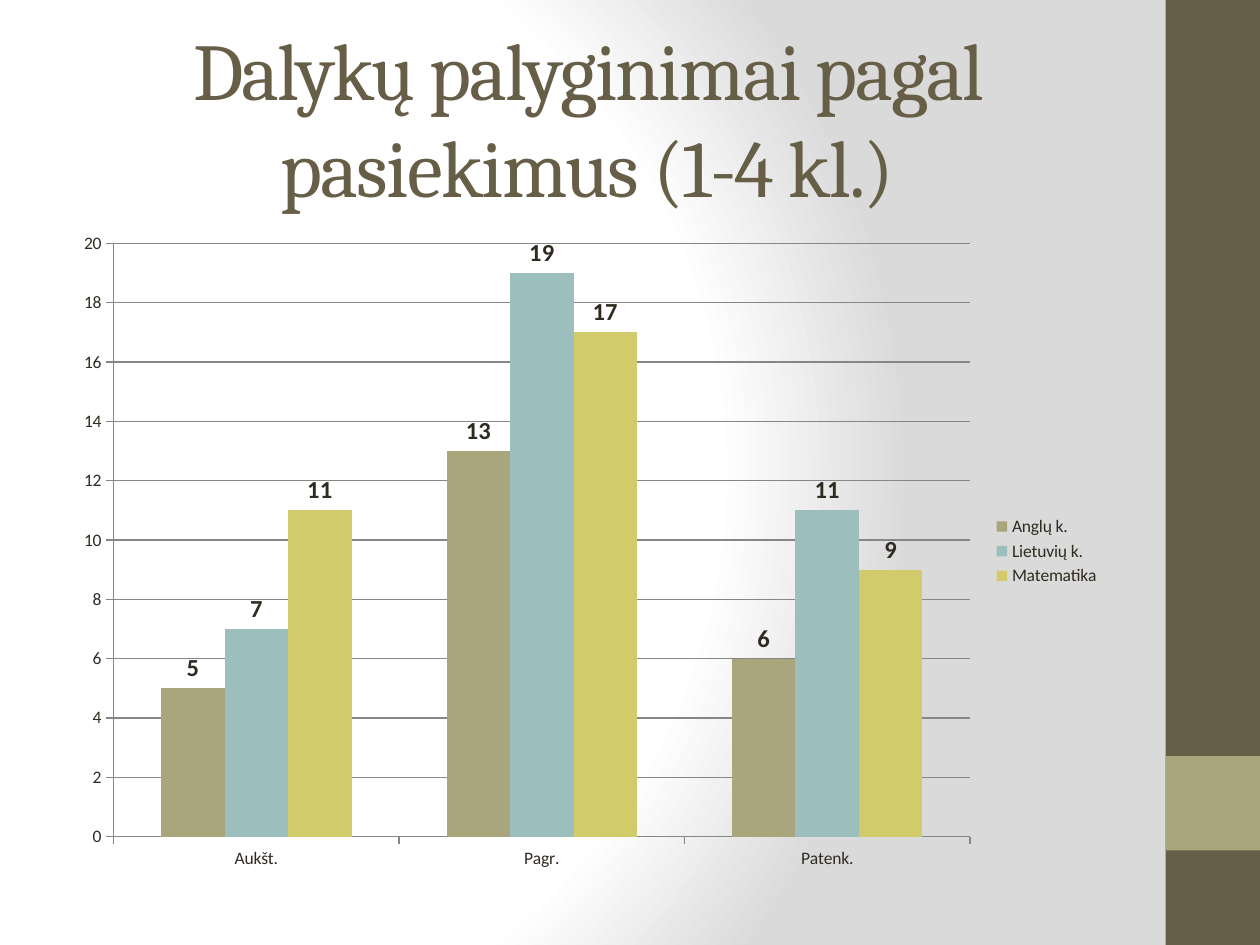
import pptx
import pptx.chart.data
import pptx.dml.color
import pptx.enum.chart
import pptx.enum.shapes
import pptx.enum.text
import pptx.oxml
import pptx.oxml.ns
import pptx.util
from pptx.util import Inches

# Content
TITLE = "Dalykų palyginimai pagal pasiekimus (1-4 kl.)"
LEVELS = ["Aukšt.", "Pagr.", "Patenk."]
SUBJECTS = [
    ("Anglų k.", (5, 13, 6), "A9A57C"),
    ("Lietuvių k.", (7, 19, 11), "9CBEBD"),
    ("Matematika", (11, 17, 9), "D2CB6C"),
]
THEME = {
    "heading_font": "Cambria", "body_font": "Calibri",
    "brown": "675E47", "olive": "A9A57C", "text": "2F2B20", "grid": "868686",
    "title_size": 46, "chart_size": 10, "label_size": 14,
    "background": [(0, "FFFFFF"), (75, "FFFFFF"), (100, "DADADA")],
}
SIDE_BANDS = [(0, 7.5, "brown"), (6, 0.75, "olive")]  # top, height, colour
LEFT, WIDTH = 0.5, 8.33


def color(value):
    return pptx.dml.color.RGBColor.from_string(value)


def style_font(font, size, shade, face, bold=False):
    font.size = pptx.util.Pt(size)
    font.color.rgb = color(shade)
    font.name = face
    font.bold = bold


def add_background(slide):
    fill = slide.background.fill
    fill.solid()
    stops = "".join(
        f'<a:gs pos="{pos * 1000}"><a:srgbClr val="{shade}"/></a:gs>'
        for pos, shade in THEME["background"])
    gradient = pptx.oxml.parse_xml(
        f'<a:gradFill {pptx.oxml.ns.nsdecls("a")} rotWithShape="1">'
        f'<a:gsLst>{stops}</a:gsLst><a:path path="circle">'
        '<a:fillToRect l="20000" t="50000" r="100000" b="50000"/>'
        '</a:path></a:gradFill>')
    solid = slide.element.find(".//" + pptx.oxml.ns.qn("a:solidFill"))
    solid.getparent().replace(solid, gradient)


def add_side_bands(slide):
    for top, height, shade in SIDE_BANDS:
        band = slide.shapes.add_shape(
            pptx.enum.shapes.MSO_SHAPE.RECTANGLE,
            Inches(9.25), Inches(top), Inches(0.75), Inches(height))
        band.shadow.inherit = False
        band.fill.solid()
        band.fill.fore_color.rgb = color(THEME[shade])
        band.line.fill.background()


def add_title(slide):
    heading = slide.shapes.add_textbox(
        Inches(LEFT), Inches(0.3), Inches(WIDTH), Inches(1.25)).text_frame
    heading.word_wrap = True
    heading.vertical_anchor = pptx.enum.text.MSO_ANCHOR.MIDDLE
    heading.text = TITLE
    line = heading.paragraphs[0]
    line.alignment = pptx.enum.text.PP_ALIGN.CENTER
    font = line.runs[0].font
    style_font(font, THEME["title_size"], THEME["brown"], THEME["heading_font"])
    line.runs[0]._r.get_or_add_rPr().set("spc", "-100")


def add_results_chart(slide):
    results = pptx.chart.data.CategoryChartData()
    results.categories = LEVELS
    for name, values, _ in SUBJECTS:
        results.add_series(name, values)
    chart = slide.shapes.add_chart(
        pptx.enum.chart.XL_CHART_TYPE.COLUMN_CLUSTERED,
        Inches(LEFT), Inches(1.75), Inches(WIDTH), Inches(5.25), results).chart
    chart.has_title = False
    style_font(chart.font, THEME["chart_size"], THEME["text"], THEME["body_font"])

    # Legend
    chart.has_legend = True
    chart.legend.position = pptx.enum.chart.XL_LEGEND_POSITION.RIGHT
    chart.legend.include_in_layout = False

    # Axes and gridlines
    scale = chart.value_axis
    scale.minimum_scale, scale.maximum_scale, scale.major_unit = 0, 20, 2
    scale.has_major_gridlines = True
    for axis in (chart.category_axis, scale):
        axis.major_tick_mark = pptx.enum.chart.XL_TICK_MARK.OUTSIDE
    for part in (chart.category_axis, scale, scale.major_gridlines):
        part.format.line.color.rgb = color(THEME["grid"])
        part.format.line.width = pptx.util.Pt(0.75)

    # Columns with their values
    plot = chart.plots[0]
    plot.gap_width = 150
    plot.overlap = 0
    plot.vary_by_categories = False
    for columns, (_, _, shade) in zip(plot.series, SUBJECTS):
        columns.format.fill.solid()
        columns.format.fill.fore_color.rgb = color(shade)
        labels = columns.data_labels
        labels.show_value = True
        labels.position = pptx.enum.chart.XL_LABEL_POSITION.OUTSIDE_END
        style_font(labels.font, THEME["label_size"], THEME["text"],
                   THEME["body_font"], bold=True)


def main():
    deck = pptx.Presentation()
    deck.slide_width, deck.slide_height = Inches(10), Inches(7.5)
    slide = deck.slides.add_slide(deck.slide_layouts[6])
    add_background(slide)
    add_side_bands(slide)
    add_title(slide)
    add_results_chart(slide)
    deck.save("out.pptx")


if __name__ == "__main__":
    main()
